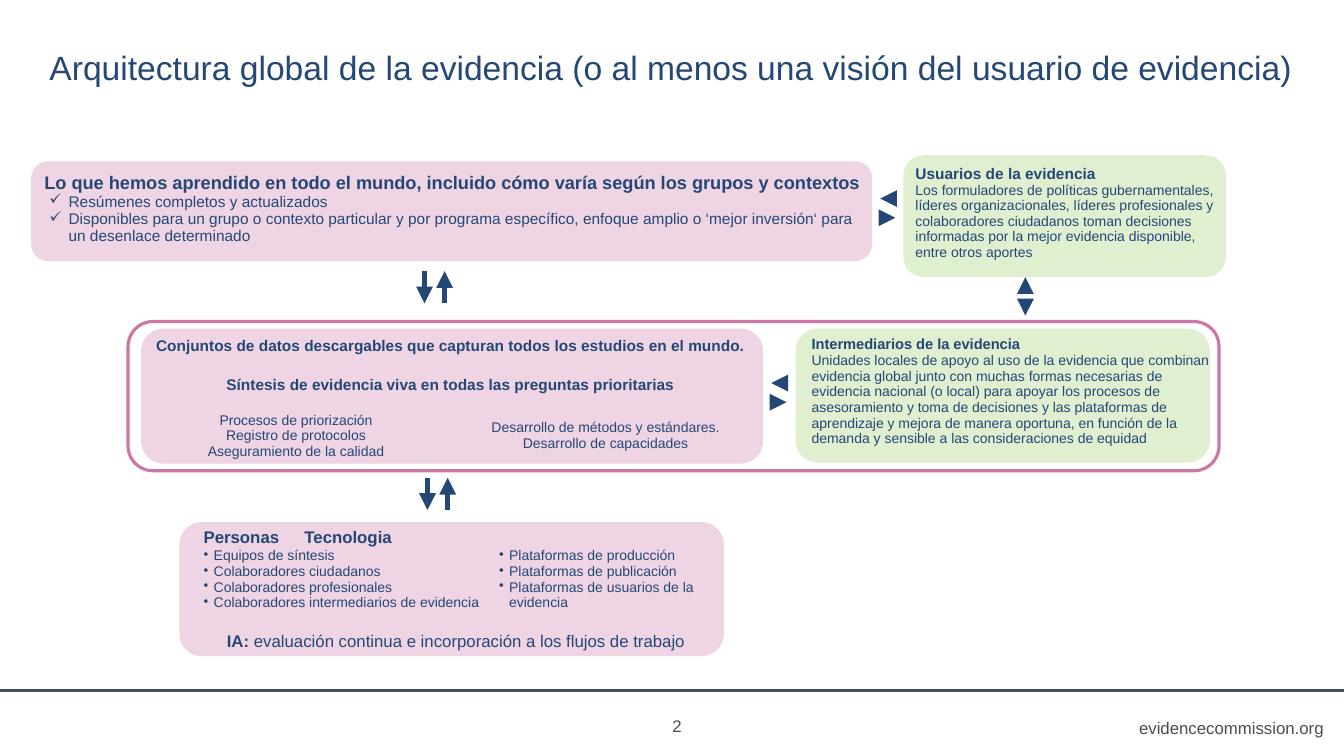
from dataclasses import dataclass

from lxml.etree import SubElement
from pptx import Presentation
from pptx.dml.color import RGBColor
from pptx.enum.shapes import MSO_CONNECTOR, MSO_SHAPE
from pptx.enum.text import MSO_ANCHOR, PP_ALIGN
from pptx.oxml.ns import qn
from pptx.util import Inches, Pt


@dataclass(frozen=True)
class Theme:
    font: str = "Arial"
    ink: str = "244776"
    gray: str = "464F55"
    pink: str = "CC76A6"
    green: str = "99CC66"
    tint: int = 30
    title: float = 24
    lead: float = 13
    head: float = 12
    sub: float = 11
    body: float = 10
    plain: str = "{2D5ABB26-0587-4C30-8999-92F81FD0307C}"


T = Theme()


@dataclass(frozen=True)
class Line:
    text: str
    size: float = T.body
    bold: bool = False
    rest: str = ""
    mid: bool = False
    mark: str = ""
    left: float = 0
    hang: float = 0
    tab: float = 0


@dataclass(frozen=True)
class Panel:
    box: tuple
    color: str
    solid: bool = True


@dataclass(frozen=True)
class Grid:
    box: tuple
    cols: list
    rows: list
    cells: list
    mid: bool = False
    top: float = 0


def write(par, text: str, *, size: float, color: str = T.ink, bold: bool = False):
    run = par.add_run()
    run.text = text
    font = run.font
    font.name, font.size, font.bold = T.font, Pt(size), bold
    font.color.rgb = RGBColor.from_string(color)


def add_line(par, line: Line) -> None:
    par.alignment = PP_ALIGN.CENTER if line.mid else PP_ALIGN.LEFT
    props = par._p.get_or_add_pPr()
    props.set("marL", str(Inches(line.left)))
    props.set("indent", str(Inches(-line.hang)))
    if line.mark:
        SubElement(props, qn("a:buChar")).set("char", line.mark)
    if line.tab:
        stops = SubElement(props, qn("a:tabLst"))
        SubElement(stops, qn("a:tab"), pos=str(Inches(line.tab)), algn="l")
    write(par, line.text, size=line.size, bold=line.bold)
    if line.rest:
        write(par, line.rest, size=line.size)


def add_panel(slide, panel: Panel) -> None:
    shape = slide.shapes.add_shape(MSO_SHAPE.ROUNDED_RECTANGLE, *map(Inches, panel.box))
    shape.shadow.inherit = False
    color = RGBColor.from_string(panel.color)
    if panel.solid:
        shape.line.fill.background()
        shape.fill.solid()
        shape.fill.fore_color.rgb = color
        tone = shape._element.spPr.find(".//" + qn("a:srgbClr"))
        SubElement(tone, qn("a:alpha")).set("val", str(T.tint * 1000))
    else:
        shape.fill.background()
        shape.line.color.rgb = color
        shape.line.width = Pt(2.25)


def add_grid(slide, grid: Grid) -> None:
    table = slide.shapes.add_table(
        len(grid.rows), len(grid.cols), *map(Inches, grid.box)).table
    table.first_row = table.horz_banding = False
    table._tbl.tblPr.find(qn("a:tableStyleId")).text = T.plain
    for col, wide in zip(table.columns, grid.cols):
        col.width = Inches(wide)
    for r, (high, cells) in enumerate(zip(grid.rows, grid.cells)):
        table.rows[r].height = Inches(high)
        if len(cells) < len(grid.cols):
            table.cell(r, 0).merge(table.cell(r, len(grid.cols) - 1))
        for c, lines in enumerate(cells):
            cell = table.cell(r, c)
            cell.fill.background()
            cell.margin_left = cell.margin_right = Inches(0.02)
            cell.margin_top, cell.margin_bottom = Inches(grid.top), 0
            cell.vertical_anchor = MSO_ANCHOR.MIDDLE if grid.mid else MSO_ANCHOR.TOP
            frame = cell.text_frame
            for n, line in enumerate(lines):
                add_line(frame.add_paragraph() if n else frame.paragraphs[0], line)


def add_rule(slide, ends: tuple, color: str, wide: float, arrow: bool = False) -> None:
    rule = slide.shapes.add_connector(MSO_CONNECTOR.STRAIGHT, *map(Inches, ends))
    rule.line.color.rgb = RGBColor.from_string(color)
    rule.line.width = Pt(wide)
    if arrow:
        SubElement(rule.line._get_or_add_ln(), qn("a:tailEnd")).set("type", "triangle")
    SubElement(rule._element.spPr, qn("a:effectLst"))


def add_note(slide, box: tuple, text: str, align, anchor) -> None:
    frame = slide.shapes.add_textbox(*map(Inches, box)).text_frame
    frame.word_wrap = True
    frame.vertical_anchor = anchor
    par = frame.paragraphs[0]
    par.alignment = align
    write(par, text, size=T.head, color=T.gray)


def ticks(*texts: str) -> list:
    return [Line(t, T.sub, mark="✓", left=0.29, hang=0.19) for t in texts]


def dots(*texts: str) -> list:
    return [Line(t, mark="•", left=0.1, hang=0.1) for t in texts]


def center(*texts: str) -> list:
    return [Line(t, mid=True) for t in texts]


def strong(text: str, size: float = T.sub) -> list:
    return [Line(text, size, bold=True, mid=True)]


PANELS = [
    Panel((0.31, 1.6, 8.34, 0.99), T.pink),
    Panel((1.27, 3.19, 10.82, 1.48), T.pink, solid=False),
    Panel((1.4, 3.26, 6.17, 1.34), T.pink),
    Panel((1.78, 5.18, 5.4, 1.33), T.pink),
    Panel((7.89, 3.26, 4.11, 1.33), T.green),
    Panel((8.96, 1.54, 3.2, 1.21), T.green),
]

GRIDS = [
    Grid((0.37, 1.69, 8.22, 0.77), [8.22], [0.77], [[
        strong("Lo que hemos aprendido en todo el mundo, incluido cómo varía según "
               "los grupos y contextos", T.lead)
        + ticks("Resúmenes completos y actualizados",
                "Disponibles para un grupo o contexto particular y por programa específico, "
                "enfoque amplio o ‘mejor inversión‘ para un desenlace determinado")]], mid=True),
    Grid((1.4, 3.24, 6.13, 1.39), [3.07, 3.07], [0.39, 0.39, 0.61], [
        [strong("Conjuntos de datos descargables que capturan todos los estudios en el mundo.")],
        [strong("Síntesis de evidencia viva en todas las preguntas prioritarias")],
        [center("Procesos de priorización", "Registro de protocolos",
                "Aseguramiento de la calidad"),
         center("Desarrollo de métodos y estándares.", "Desarrollo de capacidades")]], mid=True),
    Grid((2, 5.24, 5.4, 1.61), [2.93, 2.47], [0.2, 0.83, 0.58], [
        [[Line("Personas\tTecnologia", T.head, bold=True, tab=2.78)]],
        [dots("Equipos de síntesis", "Colaboradores ciudadanos", "Colaboradores profesionales",
              "Colaboradores intermediarios de evidencia"),
         dots("Plataformas de producción", "Plataformas de publicación",
              "Plataformas de usuarios de la evidencia")],
        [[Line("IA: ", T.head, bold=True, left=0.23,
               rest="evaluación continua e incorporación a los flujos de trabajo")]]]),
    Grid((8.03, 3.33, 4.06, 1.19), [4.06], [1.17], [[[
        Line("Intermediarios de la evidencia", 10.5, bold=True),
        Line("Unidades locales de apoyo al uso de la evidencia que combinan evidencia global "
             "junto con muchas formas necesarias de evidencia nacional (o local) para apoyar "
             "los procesos de asesoramiento y toma de decisiones y las plataformas de "
             "aprendizaje y mejora de manera oportuna, en función de la demanda y sensible "
             "a las consideraciones de equidad")]]], top=0.01),
    Grid((9.06, 1.63, 3.06, 1.03), [3.06], [0.99], [[[
        Line("Usuarios de la evidencia", T.sub, bold=True),
        Line("Los formuladores de políticas gubernamentales, líderes organizacionales, líderes "
             "profesionales y colaboradores ciudadanos toman decisiones informadas por la mejor "
             "evidencia disponible, entre otros aportes")]]], top=0.01),
]

# Left-top corners of the arrow pairs
ACROSS = [(7.65, 3.8), (8.73, 1.97)]
UPDOWN = [(4.21, 2.69), (4.24, 4.74)]


def main() -> None:
    deck = Presentation()
    deck.slide_width, deck.slide_height = Inches(13.33), Inches(7.5)
    slide = deck.slides.add_slide(deck.slide_layouts[5])

    # Title
    title = slide.shapes.title
    title.left, title.top, title.width, title.height = map(Inches, (0.39, 0.23, 12.94, 0.87))
    title.text_frame.vertical_anchor = MSO_ANCHOR.MIDDLE
    par = title.text_frame.paragraphs[0]
    par.alignment = PP_ALIGN.LEFT
    write(par, "Arquitectura global de la evidencia (o al menos una visión del usuario "
          "de evidencia)", size=T.title)

    # Panels and their text
    for panel in PANELS:
        add_panel(slide, panel)
    for grid in GRIDS:
        add_grid(slide, grid)

    # Arrows
    arrows = [(10.17, 2.97, 10.17, 3.13), (10.17, 2.91, 10.17, 2.75)]
    for x, y in ACROSS:
        arrows += [(x, y + 0.19, x + 0.15, y + 0.19), (x + 0.15, y, x, y)]
    for x, y in UPDOWN:
        arrows += [(x, y, x, y + 0.32), (x + 0.2, y + 0.32, x + 0.2, y)]
    for ends in arrows:
        add_rule(slide, ends, T.ink, 4, arrow=True)

    # Footer
    add_rule(slide, (0, 6.85, 13.33, 6.85), T.gray, 2)
    add_note(slide, (11.17, 7.07, 2.06, 0.3), "evidencecommission.org",
             PP_ALIGN.RIGHT, MSO_ANCHOR.TOP)
    add_note(slide, (6.52, 7, 0.39, 0.4), "2", PP_ALIGN.CENTER, MSO_ANCHOR.MIDDLE)
    deck.save("out.pptx")


if __name__ == "__main__":
    main()
